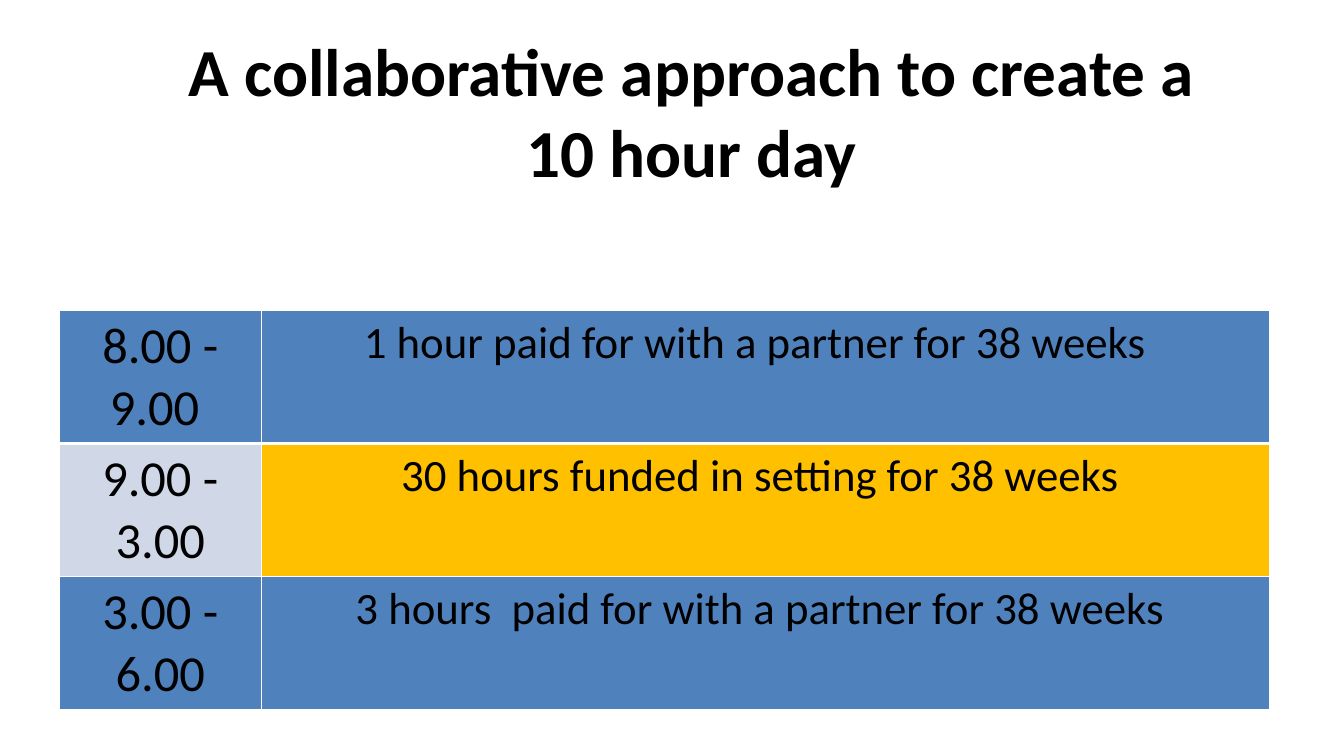
from pptx import Presentation
from pptx.dml.color import RGBColor as RGB
from pptx.enum.text import MSO_ANCHOR as Anchor, PP_ALIGN as Align
from pptx.oxml.ns import qn
from pptx.util import Inches, Pt
from lxml.etree import SubElement as Sub

HUES = {"ink": "000000", "blue": "4F81BD", "pale": "D0D8E8",
        "gold": "FFC000", "line": "FFFFFF"}
FONT = "Calibri"
TITLE = ["A collaborative approach to create a", "10 hour day"]
ROWS = [
    (("8.00 - 9.00 ", "blue"),
     ("1 hour paid for with a partner for 38 weeks  ", "blue")),
    (("9.00 - 3.00", "pale"),
     ("30 hours funded in setting for 38 weeks ", "gold")),
    (("3.00 - 6.00", "blue"),
     ("3 hours  paid for with a partner for 38 weeks ", "blue")),
]
COLS = [(2, 36), (10, 32)]
HIGH = 1.32
LEFT, TOP = 0.59, 3.08


def style(para, size, bold=False):
    """Centre a paragraph and set its font."""
    para.alignment = Align.CENTER
    font = para.font
    font.name, font.size, font.bold = FONT, Pt(size), bold
    font.color.rgb = RGB.from_string(HUES["ink"])


def edge(cell, side, width):
    """Draw one border of a cell."""
    line = Sub(cell._tc.get_or_add_tcPr(), qn(f"a:ln{side}"), w=str(Pt(width)))
    Sub(Sub(line, qn("a:solidFill")), qn("a:srgbClr"), val=HUES["line"])


def add_title(slide):
    """Place the two-line heading."""
    box = slide.shapes.add_textbox(
        Inches(LEFT), Inches(0.47), Inches(12.54), Inches(1.25))
    frame = box.text_frame
    frame.word_wrap = True
    frame.vertical_anchor = Anchor.MIDDLE
    frame.text = "\n".join(TITLE)
    for para in frame.paragraphs:
        style(para, 48, True)
    last = frame.paragraphs[-1]._p.get_or_add_pPr()
    last.set("marL", "0")
    last.set("indent", str(Inches(-0.5)))


def add_hours(slide):
    """Place the table of hours."""
    wide = sum(width for width, _ in COLS)
    table = slide.shapes.add_table(
        len(ROWS), len(COLS), Inches(LEFT), Inches(TOP),
        Inches(wide), Inches(HIGH * len(ROWS))).table
    for c, (width, _) in enumerate(COLS):
        table.columns[c].width = Inches(width)
    for r, row in enumerate(ROWS):
        table.rows[r].height = Inches(HIGH)
        for c, (text, hue) in enumerate(row):
            cell = table.cell(r, c)
            cell.text = text
            cell.margin_left = cell.margin_right = Inches(0.13)
            cell.margin_top = cell.margin_bottom = Inches(0.05)
            style(cell.text_frame.paragraphs[0], COLS[c][1])
            for side in "LRTB":
                thick = (r, side) in [(0, "B"), (1, "T")]
                edge(cell, side, 3 if thick else 1)
            cell.fill.solid()
            cell.fill.fore_color.rgb = RGB.from_string(HUES[hue])


def main():
    """Build the slide and save it."""
    deck = Presentation()
    deck.slide_width, deck.slide_height = Inches(13.33), Inches(7.5)
    slide = deck.slides.add_slide(deck.slide_layouts[6])
    add_title(slide)
    add_hours(slide)
    deck.save("out.pptx")


if __name__ == "__main__":
    main()
